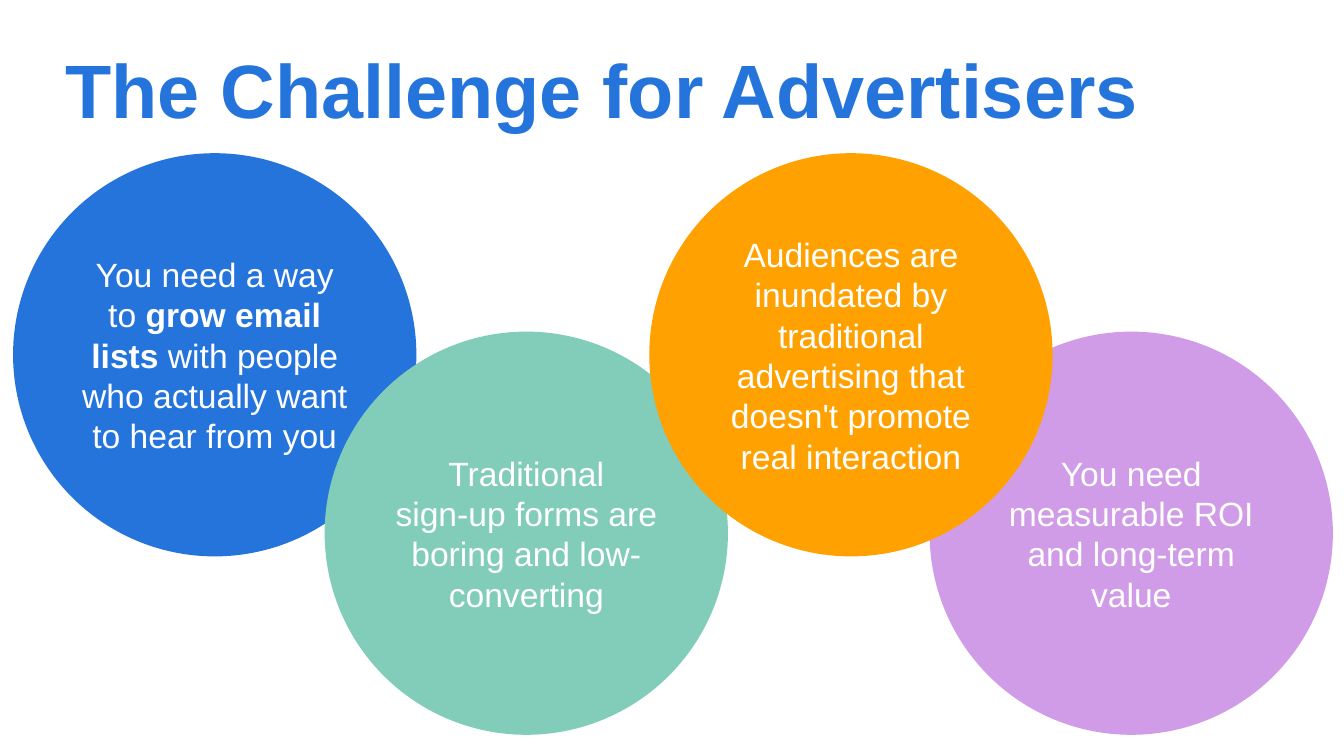
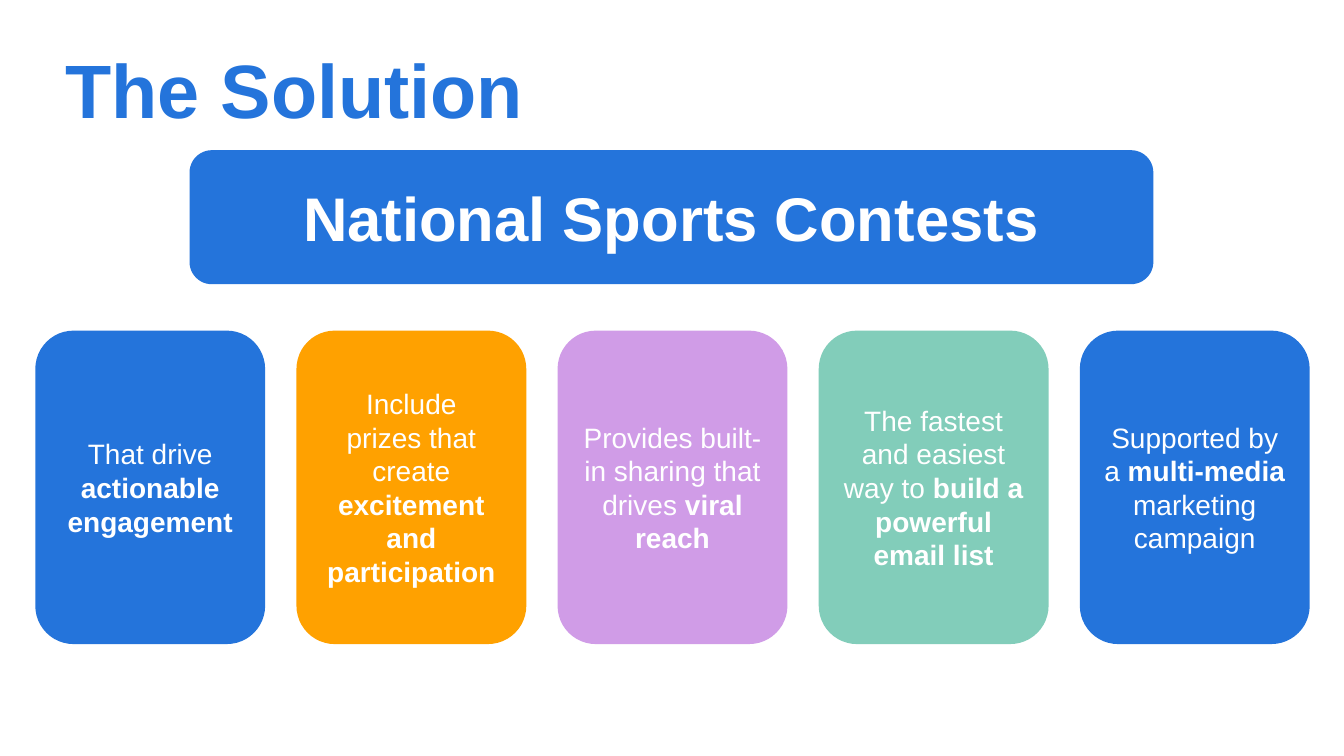
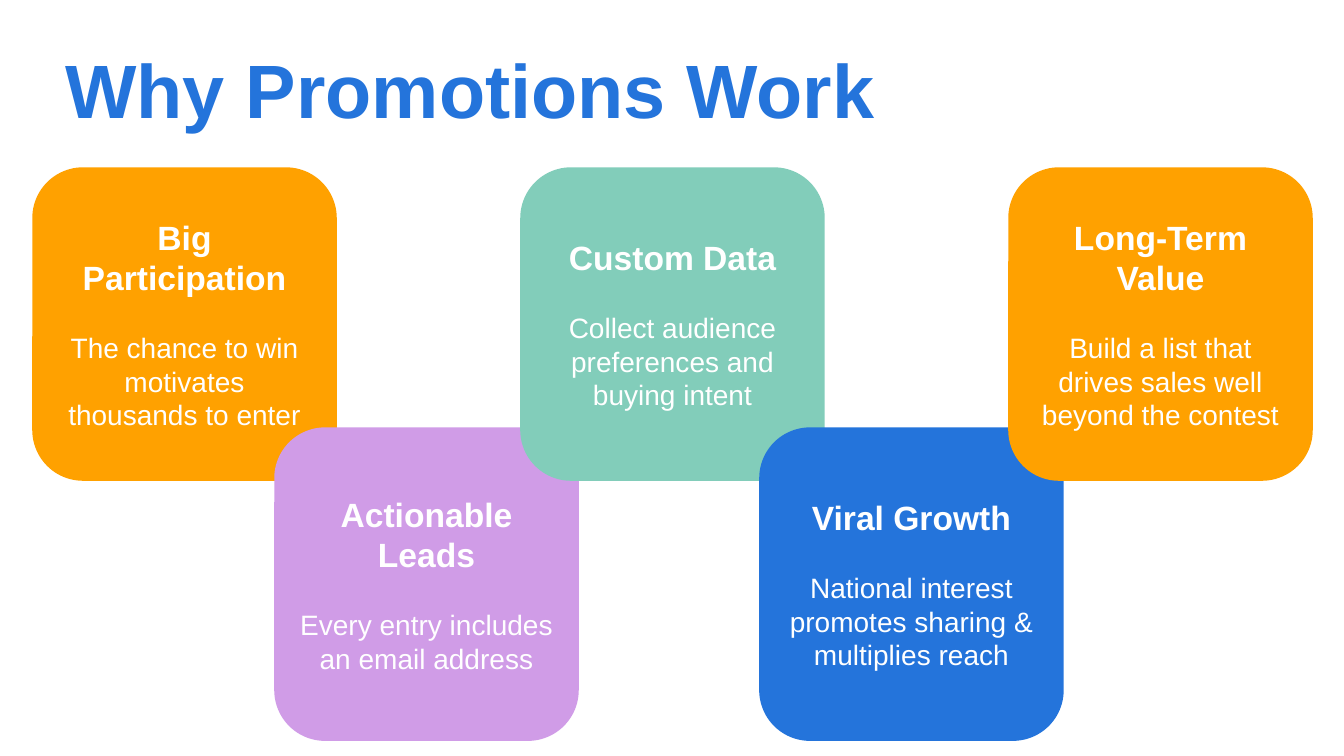
from pptx import Presentation
from pptx.dml.color import RGBColor
from pptx.enum.shapes import MSO_SHAPE as Shape
from pptx.enum.text import MSO_ANCHOR as Anchor, MSO_AUTO_SIZE as AutoSize, PP_ALIGN as Align
from pptx.util import Inches, Pt

FONT = "Arial"
COLORS = {
    "blue": "2474DB",
    "green": "82CDBA",
    "orange": "FFA100",
    "purple": "D09CE7",
    "white": "FFFFFF",
}

# A paragraph is a list of (text, bold) runs.
CHALLENGES = [  # left, top, color, paragraphs; from back to front
    (0.13, 1.52, "blue", [[("You need a way to ", False), ("grow email lists", True),
                           (" with people who actually want to hear from you", False)]]),
    (3.22, 3.29, "green", [[("Traditional", False)],
                           [("sign-up forms are boring and low-converting", False)]]),
    (9.22, 3.29, "purple", [[("You need measurable ROI and long-term value", False)]]),
    (6.44, 1.52, "orange", [[("Audiences are inundated by traditional advertising "
                              "that doesn't promote real interaction", False)]]),
]
CIRCLE_SIZE = 4

BANNER = [[("National Sports Contests", True)]]
SOLUTIONS = [
    ("blue", [[("That drive ", False), ("actionable engagement", True)]]),
    ("orange", [[("Include", False)],
                [("prizes that create ", False), ("excitement and participation", True)]]),
    ("purple", [[("Provides built-in sharing that drives ", False), ("viral reach", True)]]),
    ("green", [[("The fastest and easiest way to ", False),
                ("build a powerful email list", True)]]),
    ("blue", [[("Supported by a ", False), ("multi-media", True),
               (" marketing campaign", False)]]),
]
SOLUTION_LEFT, SOLUTION_TOP, SOLUTION_STEP = 0.35, 3.28, 2.59
SOLUTION_WIDTH, CARD_HEIGHT = 2.28, 3.11

BENEFITS = [  # left, color, heading, body
    (0.32, "orange", "Big Participation", "The chance to win motivates thousands to enter"),
    (2.72, "purple", "Actionable Leads", "Every entry includes an email address"),
    (5.16, "green", "Custom Data", "Collect audience preferences and buying intent"),
    (7.53, "blue", "Viral Growth", "National interest promotes sharing & multiplies reach"),
    (10, "orange", "Long-Term Value", "Build a list that drives sales well beyond the contest"),
]
BENEFIT_TOPS = (1.66, 4.24)
BENEFIT_WIDTH = 3.02


def set_font(font, size, color, bold=None):
    font.name = FONT
    font.size = Pt(size)
    font.color.rgb = RGBColor.from_string(COLORS[color])
    font.bold = bold


def add_titled_slide(presentation, title):
    slide = presentation.slides.add_slide(presentation.slide_layouts[5])
    shape = slide.shapes.title
    shape.left, shape.top = Inches(0.55), Inches(0.21)
    shape.width, shape.height = Inches(11.5), Inches(1.45)
    frame = shape.text_frame
    frame.text = title
    frame.word_wrap = True
    frame.auto_size = AutoSize.NONE
    frame.vertical_anchor = Anchor.MIDDLE
    paragraph = frame.paragraphs[0]
    paragraph.alignment = Align.LEFT
    paragraph.line_spacing = 0.9
    set_font(paragraph.font, 54, "blue", True)
    return slide


def add_card(slide, kind, box, color, paragraphs, size):
    """Add a filled shape with centred white text and return its paragraphs."""
    shape = slide.shapes.add_shape(kind, *map(Inches, box))
    shape.shadow.inherit = False
    shape.fill.solid()
    shape.fill.fore_color.rgb = RGBColor.from_string(COLORS[color])
    shape.line.fill.background()
    frame = shape.text_frame
    frame.word_wrap = True
    frame.vertical_anchor = Anchor.MIDDLE
    for index, runs in enumerate(paragraphs):
        paragraph = frame.add_paragraph() if index else frame.paragraphs[0]
        paragraph.alignment = Align.CENTER
        set_font(paragraph.font, size, "white")
        for text, bold in runs:
            run = paragraph.add_run()
            run.text = text
            if bold:
                run.font.bold = True
    return frame.paragraphs


def build_challenge(presentation):
    slide = add_titled_slide(presentation, "The Challenge for Advertisers")
    for left, top, color, paragraphs in CHALLENGES:
        box = (left, top, CIRCLE_SIZE, CIRCLE_SIZE)
        add_card(slide, Shape.OVAL, box, color, paragraphs, 24)


def build_solution(presentation):
    slide = add_titled_slide(presentation, "The Solution")
    add_card(slide, Shape.ROUNDED_RECTANGLE, (1.88, 1.49, 9.56, 1.33), "blue", BANNER, 44)
    for index, (color, paragraphs) in enumerate(SOLUTIONS):
        left = SOLUTION_LEFT + index * SOLUTION_STEP
        box = (left, SOLUTION_TOP, SOLUTION_WIDTH, CARD_HEIGHT)
        add_card(slide, Shape.ROUNDED_RECTANGLE, box, color, paragraphs, 20)


def build_benefits(presentation):
    slide = add_titled_slide(presentation, "Why Promotions Work")
    for index, (left, color, heading, body) in enumerate(BENEFITS):
        box = (left, BENEFIT_TOPS[index % 2], BENEFIT_WIDTH, CARD_HEIGHT)
        paragraphs = [[(heading, True)], [(body, False)]]
        _, body_paragraph = add_card(
            slide, Shape.ROUNDED_RECTANGLE, box, color, paragraphs, 24)
        body_paragraph.font.size = Pt(20)
        body_paragraph.space_before = Pt(24)


def main():
    presentation = Presentation()
    presentation.slide_width, presentation.slide_height = Inches(13.33), Inches(7.5)
    build_challenge(presentation)
    build_solution(presentation)
    build_benefits(presentation)
    presentation.save("out.pptx")


if __name__ == "__main__":
    main()
